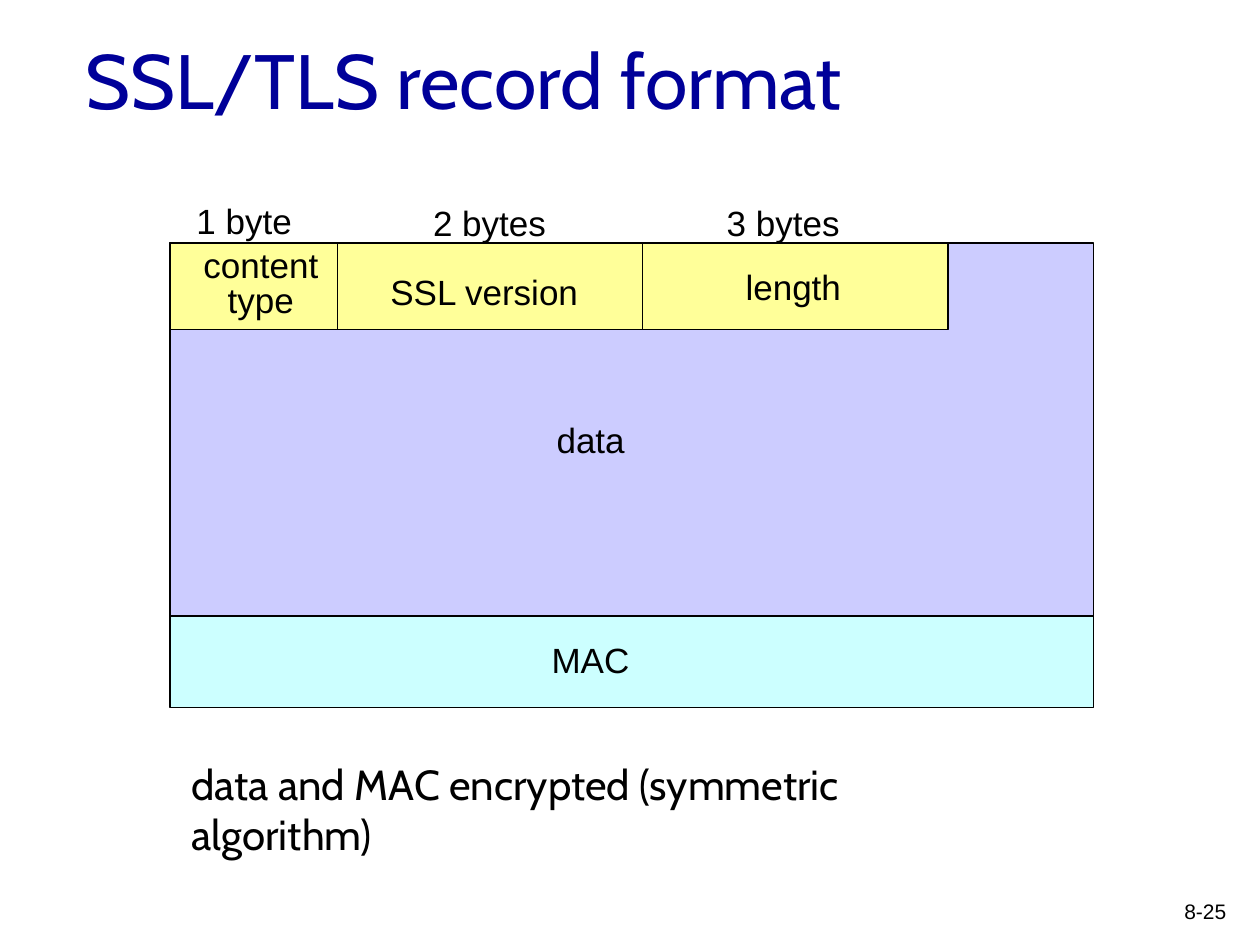
import dataclasses

import pptx
import pptx.dml.color
import pptx.enum.shapes
import pptx.enum.text
import pptx.util

Cm = pptx.util.Cm
Pt = pptx.util.Pt
Align = pptx.enum.text.PP_ALIGN
Anchor = pptx.enum.text.MSO_ANCHOR


@dataclasses.dataclass(frozen=True)
class Theme:
    heading_font: str = "Cabin"
    label_font: str = "Arial"
    title_size: int = 44
    caption_size: int = 24
    label_size: int = 20
    page_size: int = 12
    title_color: str = "000099"
    ink: str = "000000"
    data_fill: str = "CCCCFF"
    header_fill: str = "FFFF99"
    mac_fill: str = "CCFFFF"
    line_width: float = 0.75


THEME = Theme()

# Record geometry in cm
RECORD_LEFT, RECORD_TOP, RECORD_WIDTH = 3.43, 4.9, 18.62
DATA_HEIGHT = 7.95
HEADER_HEIGHT = 1.75
HEADER_WIDTHS = (3.38, 6.15, 6.15)
MAC_TOP, MAC_HEIGHT = 12.42, 1.85
LABEL_HEIGHT = 1.12

# Single-line labels: text, left, top, width in cm
FIELD_LABELS = (
    ("SSL version", 7.62, 5.33, 4.32),
    ("length", 14.78, 5.23, 2.46),
    ("MAC", 10.87, 12.75, 2.11),
    ("data", 10.97, 8.31, 1.91),
    ("1 byte", 3.71, 3.89, 2.46),
    ("2 bytes", 8.48, 3.94, 2.79),
    ("3 bytes", 14.4, 3.94, 2.79),
)


def rgb(value):
    return pptx.dml.color.RGBColor.from_string(value)


def add_block(shapes, left, top, width, height, fill):
    """Outlined rectangle for one part of the record."""
    block = shapes.add_shape(
        pptx.enum.shapes.MSO_SHAPE.RECTANGLE,
        Cm(left), Cm(top), Cm(width), Cm(height),
    )
    block.shadow.inherit = False
    block.fill.solid()
    block.fill.fore_color.rgb = rgb(fill)
    block.line.color.rgb = rgb(THEME.ink)
    block.line.width = Pt(THEME.line_width)


def add_text(shapes, text, left, top, width, height, size=THEME.label_size,
             font=THEME.label_font, color=THEME.ink, align=Align.LEFT,
             anchor=Anchor.TOP, wrap=False, spacing=None):
    box = shapes.add_textbox(Cm(left), Cm(top), Cm(width), Cm(height))
    frame = box.text_frame
    frame.word_wrap = wrap
    frame.vertical_anchor = anchor
    frame.text = text
    for paragraph in frame.paragraphs:
        paragraph.alignment = align
        paragraph.line_spacing = spacing
        for run in paragraph.runs:
            run.font.name = font
            run.font.size = Pt(size)
            run.font.color.rgb = rgb(color)


def add_record(shapes):
    # Data area, header fields on top of it, MAC at the bottom
    add_block(shapes, RECORD_LEFT, RECORD_TOP, RECORD_WIDTH, DATA_HEIGHT,
              THEME.data_fill)
    field_left = RECORD_LEFT
    for field_width in HEADER_WIDTHS:
        add_block(shapes, field_left, RECORD_TOP, field_width, HEADER_HEIGHT,
                  THEME.header_fill)
        field_left += field_width
    add_block(shapes, RECORD_LEFT, MAC_TOP, RECORD_WIDTH, MAC_HEIGHT,
              THEME.mac_fill)

    # Field names and sizes
    add_text(shapes, "content\ntype", 3.84, 4.93, 2.84, 1.68,
             align=Align.CENTER, spacing=Pt(THEME.label_size))
    for text, left, top, width in FIELD_LABELS:
        add_text(shapes, text, left, top, width, LABEL_HEIGHT)


def main():
    deck = pptx.Presentation()
    deck.slide_width, deck.slide_height = Cm(25.4), Cm(19.05)
    slide = deck.slides.add_slide(deck.slide_layouts[6])

    # Page number and title
    add_text(slide.shapes, "8-25", 23.09, 17.98, 1.88, 0.84,
             size=THEME.page_size, align=Align.RIGHT, wrap=True)
    add_text(slide.shapes, "SSL/TLS record format", 1.47, 0, 21.59, 3.18,
             size=THEME.title_size, font=THEME.heading_font,
             color=THEME.title_color, anchor=Anchor.MIDDLE, wrap=True)

    # Record diagram
    add_record(slide.shapes.add_group_shape().shapes)

    # Caption
    add_text(slide.shapes, "data and MAC encrypted (symmetric algorithm)",
             3.61, 15.16, 17.15, 1.27, size=THEME.caption_size,
             font=THEME.heading_font, wrap=True)

    deck.save("out.pptx")


if __name__ == "__main__":
    main()
